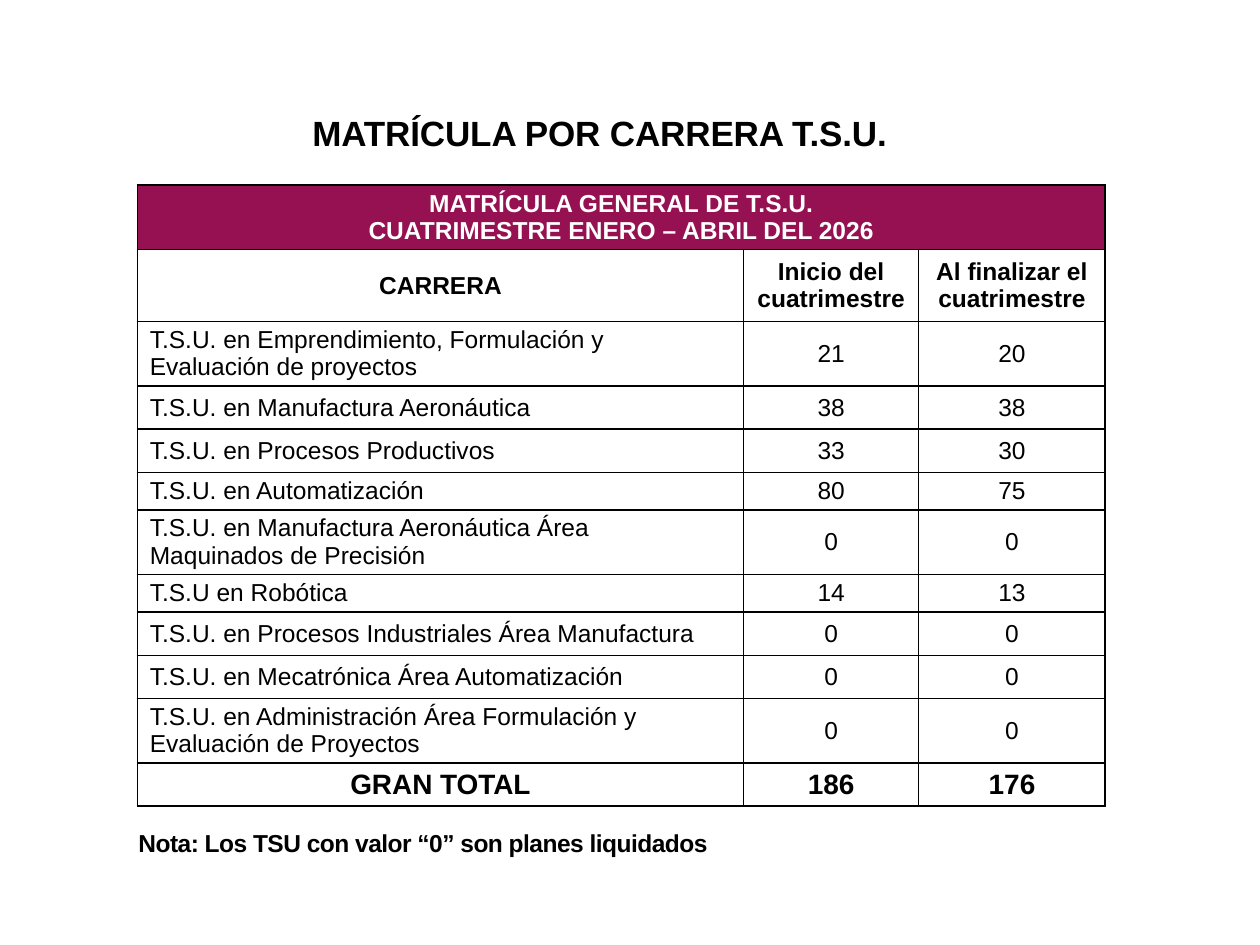
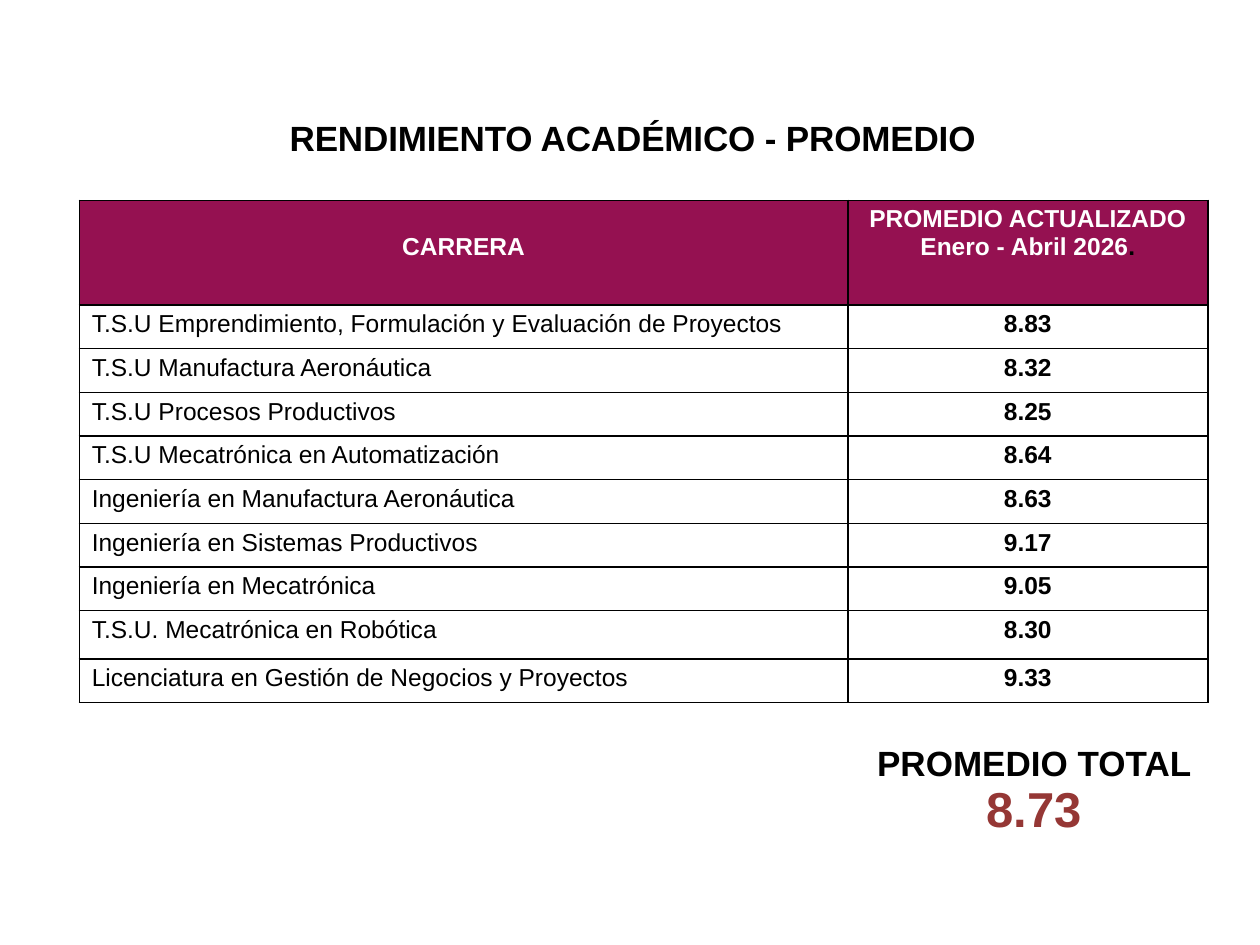
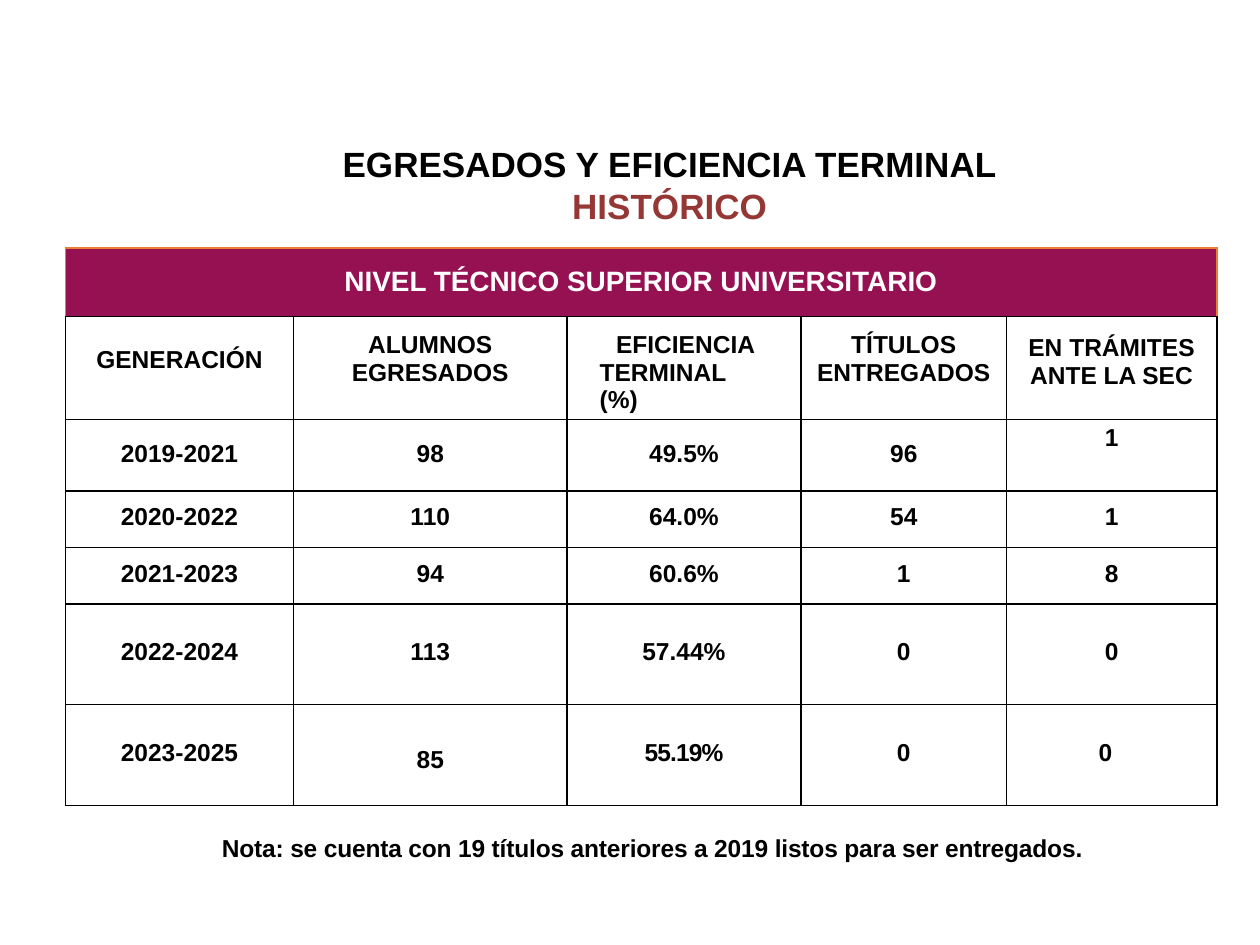
from lxml import etree
from pptx import Presentation
from pptx.dml.color import RGBColor
from pptx.enum.text import MSO_ANCHOR, PP_ALIGN
from pptx.oxml.ns import qn
from pptx.util import Cm, Pt

BLACK = RGBColor(0x00, 0x00, 0x00)
WHITE = RGBColor(0xFF, 0xFF, 0xFF)
WINE = RGBColor(0x95, 0x11, 0x51)
BRICK = RGBColor(0x95, 0x37, 0x35)
ORANGE = RGBColor(0xEC, 0x7C, 0x30)
FONT = "Arial"
LEFT, CENTER = PP_ALIGN.LEFT, PP_ALIGN.CENTER
TOP, MIDDLE = MSO_ANCHOR.TOP, MSO_ANCHOR.MIDDLE


def write(text_frame, text, size=14, color=BLACK, bold=True, align=CENTER, spacing=0):
    """Fill a text frame; spacing is in hundredths of a point."""
    text_frame.text = text
    for paragraph in text_frame.paragraphs:
        paragraph.alignment = align
        for run in paragraph.runs:
            run.font.name = FONT
            run.font.size = Pt(size)
            run.font.bold = bold
            run.font.color.rgb = color
            if spacing:
                run.font._element.set("spc", str(spacing))


def add_grid(slide, left, top, widths, heights, rows, text_tops=None, border=BLACK):
    """Add a plain table; text_tops gives the top margin of each row's text."""
    frame = slide.shapes.add_table(len(heights), len(widths), Cm(left), Cm(top),
                                   Cm(sum(widths)), Cm(sum(heights)))
    table = frame.table
    table.first_row = table.horz_banding = False
    for column, width in zip(table.columns, widths):
        column.width = Cm(width)
    for index, (row, height) in enumerate(zip(table.rows, heights)):
        row.height = Cm(height)
        for cell, text in zip(row.cells, rows[index]):
            cell.margin_left = cell.margin_right = cell.margin_bottom = 0
            cell.margin_top = Cm(text_tops[index]) if text_tops else 0
            cell.vertical_anchor = TOP if text_tops else MIDDLE
            if border is not None:
                properties = cell._tc.get_or_add_tcPr()
                for side in ("a:lnL", "a:lnR", "a:lnT", "a:lnB"):
                    line = etree.SubElement(properties, qn(side), w=str(Pt(1)))
                    solid = etree.SubElement(line, qn("a:solidFill"))
                    etree.SubElement(solid, qn("a:srgbClr"), val=str(border))
            cell.fill.background()
            if text:
                write(cell.text_frame, text)
    return table


presentation = Presentation()
presentation.slide_width = Cm(25.4)
presentation.slide_height = Cm(19.05)
blank_layout = presentation.slide_layouts[6]
enrolment_slide, grades_slide, graduates_slide = [
    presentation.slides.add_slide(blank_layout) for _ in range(3)]

# Titles and notes: slide, box, top margin, text, size, alignment, spacing
captions = [
    (enrolment_slide, (6.3, 2.21, 12.12, 0.89), 0.03,
     "MATRÍCULA POR CARRERA T.S.U.", 20, LEFT, -10),
    (enrolment_slide, (2.79, 16.66, 19.15, 0.64), 0.03,
     "Nota: Los TSU con valor “0” son planes liquidados", 14, LEFT, -30),
    (grades_slide, (5.84, 2.31, 14.27, 0.89), 0.03,
     "RENDIMIENTO ACADÉMICO - PROMEDIO", 20, LEFT, -10),
    (graduates_slide, (4.27, 1.96, 18.46, 2.64), 0.91,
     "EGRESADOS Y EFICIENCIA TERMINAL\nHISTÓRICO", 20, CENTER, 0),
    (graduates_slide, (1.32, 16.66, 23.65, 0.86), 0.13,
     "Nota: se cuenta con 19 títulos anteriores a 2019 listos para ser entregados.",
     14, CENTER, -10),
]
for slide, box, margin_top, text, size, align, spacing in captions:
    shape = slide.shapes.add_textbox(*[Cm(length) for length in box])
    text_frame = shape.text_frame
    text_frame.word_wrap = True
    text_frame.margin_left = text_frame.margin_right = text_frame.margin_bottom = 0
    text_frame.margin_top = Cm(margin_top)
    write(text_frame, text, size, align=align, spacing=spacing)
    if "HISTÓRICO" in text:
        text_frame.paragraphs[1].runs[0].font.color.rgb = BRICK

# Slide 1: enrolment by programme
enrolment_rows = [
    ("MATRÍCULA GENERAL DE T.S.U.\nCUATRIMESTRE ENERO – ABRIL DEL 2026", "", ""),
    ("CARRERA", "Inicio del cuatrimestre", "Al finalizar el cuatrimestre"),
    ("T.S.U. en Emprendimiento, Formulación y Evaluación de proyectos", "21", "20"),
    ("T.S.U. en Manufactura Aeronáutica", "38", "38"),
    ("T.S.U. en Procesos Productivos", "33", "30"),
    ("T.S.U. en Automatización", "80", "75"),
    ("T.S.U. en Manufactura Aeronáutica Área Maquinados de Precisión", "0", "0"),
    ("T.S.U en Robótica", "14", "13"),
    ("T.S.U. en Procesos Industriales Área Manufactura", "0", "0"),
    ("T.S.U. en Mecatrónica Área Automatización", "0", "0"),
    ("T.S.U. en Administración Área Formulación y Evaluación de Proyectos", "0", "0"),
    ("GRAN TOTAL", "186", "176"),
]
enrolment = add_grid(
    enrolment_slide, 2.77, 3.73, [12.22, 3.53, 3.76],
    [1.3, 1.45, 1.3, 0.87, 0.87, 0.76, 1.3, 0.76, 0.87, 0.87, 1.3, 0.87], enrolment_rows)
enrolment.cell(0, 0).merge(enrolment.cell(0, 2))
enrolment.cell(0, 0).fill.solid()
enrolment.cell(0, 0).fill.fore_color.rgb = WINE
write(enrolment.cell(0, 0).text_frame, enrolment_rows[0][0], color=WHITE)
for row_index in range(2, 11):
    for column_index, text in enumerate(enrolment_rows[row_index]):
        write(enrolment.cell(row_index, column_index).text_frame, text, bold=False,
              align=CENTER if column_index else LEFT)
    programme = enrolment.cell(row_index, 0)
    programme.margin_left = Cm(0.25)
    programme.margin_right = Cm(0.76)
for column_index, text in enumerate(enrolment_rows[-1]):
    write(enrolment.cell(11, column_index).text_frame, text, size=16)

# Slide 2: average grades
grade_rows = [
    ("CARRERA", "PROMEDIO ACTUALIZADO Enero - Abril 2026"),
    ("T.S.U Emprendimiento, Formulación y Evaluación de Proyectos", "8.83"),
    ("T.S.U Manufactura Aeronáutica", "8.32"),
    ("T.S.U Procesos Productivos", "8.25"),
    ("T.S.U Mecatrónica en Automatización", "8.64"),
    ("Ingeniería en Manufactura Aeronáutica", "8.63"),
    ("Ingeniería en Sistemas Productivos", "9.17"),
    ("Ingeniería en Mecatrónica", "9.05"),
    ("T.S.U. Mecatrónica en Robótica", "8.30"),
    ("Licenciatura en Gestión de Negocios y Proyectos", "9.33"),
]
grades = add_grid(grades_slide, 1.6, 4.04, [15.49, 7.26],
                  [2.11] + [0.88] * 7 + [0.97, 0.88], grade_rows, [0.1] + [0.11] * 9)
for column_index, text in enumerate(grade_rows[0]):
    header = grades.cell(0, column_index)
    header.fill.solid()
    header.fill.fore_color.rgb = WINE
    write(header.text_frame, text, color=WHITE)
grades.cell(0, 0).margin_top = Cm(0.67)
period_end = grades.cell(0, 1).text_frame.paragraphs[0].add_run()
period_end.text = "."
period_end.font.name = FONT
period_end.font.size = Pt(14)
period_end.font.bold = True
period_end.font.color.rgb = BLACK
for row_index in range(1, len(grade_rows)):
    programme = grades.cell(row_index, 0)
    programme.margin_left = Cm(0.25)
    write(programme.text_frame, grade_rows[row_index][0], bold=False, align=LEFT)

# Overall average
average = add_grid(grades_slide, 16.94, 14.88, [7.82], [2.29], [("",)], [0.13], None)
average_text = average.cell(0, 0).text_frame
write(average_text, "PROMEDIO TOTAL\n8.73", size=20)
average_value = average_text.paragraphs[1].runs[0]
average_value.font.size = Pt(28)
average_value.font.color.rgb = BRICK

# Slide 3: graduates and completion rate
graduate_rows = [
    ("NIVEL TÉCNICO SUPERIOR UNIVERSITARIO", "", "", "", ""),
    ("GENERACIÓN", "ALUMNOS EGRESADOS", "EFICIENCIA TERMINAL (%)",
     "TÍTULOS ENTREGADOS", "EN TRÁMITES ANTE LA SEC"),
    ("2019-2021", "98", "49.5%", "96", "1"),
    ("2020-2022", "110", "64.0%", "54", "1"),
    ("2021-2023", "94", "60.6%", "1", "8"),
    ("2022-2024", "113", "57.44%", "0", "0"),
    ("2023-2025", "85", "55.19%", "0", "0"),
]
graduates = add_grid(
    graduates_slide, 1.32, 5.0, [4.6, 5.51, 4.72, 4.14, 4.24],
    [1.38, 1.98, 1.44, 1.14, 1.14, 2.03, 2.03], graduate_rows,
    [0.36, 0.3, 0.41, 0.25, 0.25, 0.69, 0.69])
for cell in graduates.rows[0].cells:
    for side in ("a:lnL", "a:lnR", "a:lnT"):
        line = cell._tc.tcPr.find(qn(side))
        line.find(".//" + qn("a:srgbClr")).set("val", str(ORANGE))
level = graduates.cell(0, 0)
level.merge(graduates.cell(0, 4))
level.fill.solid()
level.fill.fore_color.rgb = WINE
write(level.text_frame, graduate_rows[0][0], size=16, color=WHITE)

# Cells that sit apart from the rest of their row
for row_index, column_index, margin_top in [(1, 0, 0.6), (1, 4, 0.33), (2, 4, 0.1), (6, 1, 0.84)]:
    graduates.cell(row_index, column_index).margin_top = Cm(margin_top)
graduates.cell(1, 4).text_frame.paragraphs[0].line_spacing = Pt(16.4)
graduates.cell(6, 4).margin_right = Cm(0.25)
write(graduates.cell(6, 2).text_frame, graduate_rows[6][2], spacing=-50)
efficiency = graduates.cell(1, 2)
efficiency.margin_left = Cm(0.66)
efficiency.margin_right = Cm(0.76)
efficiency_paragraph = efficiency.text_frame.paragraphs[0]
efficiency_paragraph.alignment = LEFT
efficiency_paragraph._p.get_or_add_pPr().set("indent", str(Cm(0.33)))

presentation.save("out.pptx")
